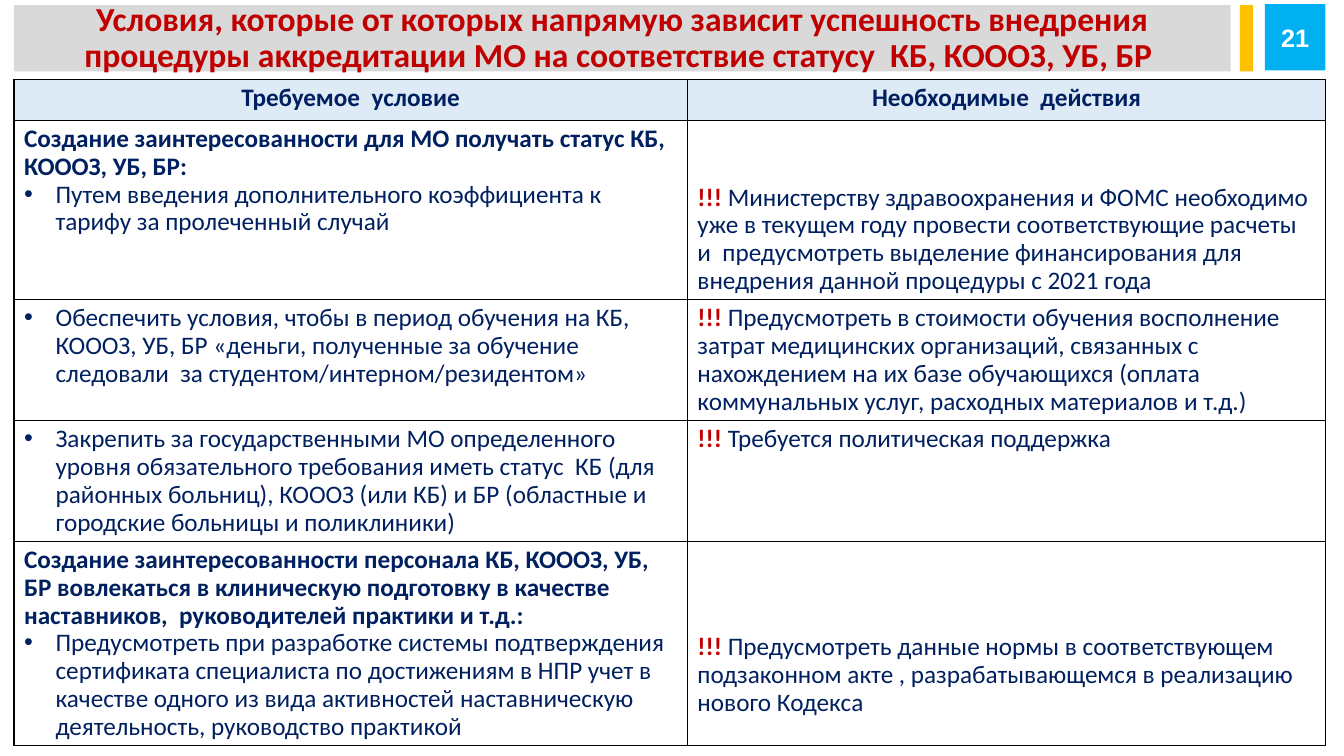
from lxml import etree
from pptx import Presentation
from pptx.dml.color import RGBColor
from pptx.enum.shapes import MSO_SHAPE
from pptx.enum.text import MSO_ANCHOR, PP_ALIGN
from pptx.oxml import parse_xml
from pptx.oxml.ns import qn
from pptx.util import Pt

RECTANGLE = MSO_SHAPE.RECTANGLE
MIDDLE = MSO_ANCHOR.MIDDLE
CENTER = PP_ALIGN.CENTER
LEFT = PP_ALIGN.LEFT
NAVY, RED, WHITE = "002060", "C00000", "FFFFFF"
DRAWING = "http://schemas.openxmlformats.org/drawingml/2006/main"


def color(value):
    return RGBColor.from_string(value)


def write(paragraph, text, size=18, font="Calibri", ink=NAVY, bold=False,
          align=LEFT, spacing=0.9, bullet=False):
    run = paragraph.add_run()
    run.text = text
    run.font.size = Pt(size)
    run.font.name = font
    run.font.bold = bold
    run.font.color.rgb = color(ink)
    paragraph.alignment = align
    paragraph.line_spacing = spacing
    if bullet:
        properties = paragraph._p.get_or_add_pPr()
        properties.set("marL", str(Pt(22.5)))
        properties.set("indent", str(-Pt(22.5)))
        etree.SubElement(properties, qn("a:buFont"), typeface="Arial")
        etree.SubElement(properties, qn("a:buChar"), char="•")


presentation = Presentation()
presentation.slide_width = Pt(960)
presentation.slide_height = Pt(540)
slide = presentation.slides.add_slide(presentation.slide_layouts[6])

title = "Условия, которые от которых напрямую зависит успешность внедрения процедуры аккредитации МО на соответствие статусу  КБ, КОООЗ, УБ, БР "
header = [
    (10, 3.6, 869, "D9D9D9", title, dict(size=24, ink=RED)),
    (885.6, 3.6, 9.4, "FFC000", "", {}),
    (903.6, 2.9, 43.2, "00B0F0", "21", dict(font="Arial", ink=WHITE, spacing=1.0)),
]
for left, top, width, fill, text, style in header:
    block = slide.shapes.add_shape(RECTANGLE, Pt(left), Pt(top), Pt(width), Pt(47.5))
    block.shadow.inherit = False
    block.fill.solid()
    block.fill.fore_color.rgb = color(fill)
    block.line.fill.background()
    if text:
        block.text_frame.word_wrap = True
        block.text_frame.vertical_anchor = MIDDLE
        write(block.text_frame.paragraphs[0], text, bold=True, align=CENTER, **style)

headings = ["Требуемое  условие", "Необходимые  действия"]
conditions = [
    ("Создание заинтересованности для МО получать статус КБ, КОООЗ, УБ, БР:",
     "Путем введения дополнительного коэффициента к тарифу за пролеченный случай",
     "Министерству здравоохранения и ФОМС необходимо уже в текущем году провести соответствующие расчеты и  предусмотреть выделение финансирования для внедрения данной процедуры с 2021 года",
     45.2),
    ("",
     "Обеспечить условия, чтобы в период обучения на КБ, КОООЗ, УБ, БР «деньги, полученные за обучение следовали  за студентом/интерном/резидентом»",
     "Предусмотреть в стоимости обучения восполнение затрат медицинских организаций, связанных с нахождением на их базе обучающихся (оплата коммунальных услуг, расходных материалов и т.д.)",
     3.6),
    ("",
     "Закрепить за государственными МО определенного уровня обязательного требования иметь статус  КБ (для районных больниц), КОООЗ (или КБ) и БР (областные и городские больницы и поликлиники)",
     "Требуется политическая поддержка",
     3.6),
    ("Создание заинтересованности персонала КБ, КОООЗ, УБ, БР вовлекаться в клиническую подготовку в качестве наставников,  руководителей практики и т.д.:",
     "Предусмотреть при разработке системы подтверждения сертификата специалиста по достижениям в НПР учет в качестве одного из вида активностей наставническую деятельность, руководство практикой",
     "Предусмотреть данные нормы в соответствующем подзаконном акте , разрабатывающемся в реализацию нового Кодекса",
     65.7),
]
column_widths = [481, 456]
row_heights = [29.5, 127.9, 86.4, 86.4, 145.7]

table = slide.shapes.add_table(
    len(row_heights), len(column_widths), Pt(10), Pt(56.7),
    Pt(sum(column_widths)), Pt(sum(row_heights))).table
for column, width in zip(table.columns, column_widths):
    column.width = Pt(width)
for row, height in zip(table.rows, row_heights):
    row.height = Pt(height)

for column, heading in enumerate(headings):
    write(table.cell(0, column).text_frame.paragraphs[0], heading, bold=True, align=CENTER)

for row, (goal, measure, action, action_top) in enumerate(conditions, start=1):
    condition_frame = table.cell(row, 0).text_frame
    paragraph = condition_frame.paragraphs[0]
    if goal:
        write(paragraph, goal, bold=True)
        paragraph = condition_frame.add_paragraph()
    write(paragraph, measure, bullet=True)

    action_cell = table.cell(row, 1)
    action_cell.margin_top = Pt(action_top)
    paragraph = action_cell.text_frame.paragraphs[0]
    write(paragraph, "!!! ", ink=RED, bold=True)
    write(paragraph, action)

for index, cell in enumerate(table.iter_cells()):
    cell.fill.solid()
    cell.fill.fore_color.rgb = color("DEEBF7" if index < len(headings) else WHITE)
    for position, side in enumerate(["lnL", "lnR", "lnT", "lnB"]):
        border = parse_xml(
            f'<a:{side} xmlns:a="{DRAWING}" w="{Pt(1)}"><a:solidFill>'
            f'<a:srgbClr val="000000"/></a:solidFill></a:{side}>')
        cell._tc.get_or_add_tcPr().insert(position, border)

presentation.save("out.pptx")
